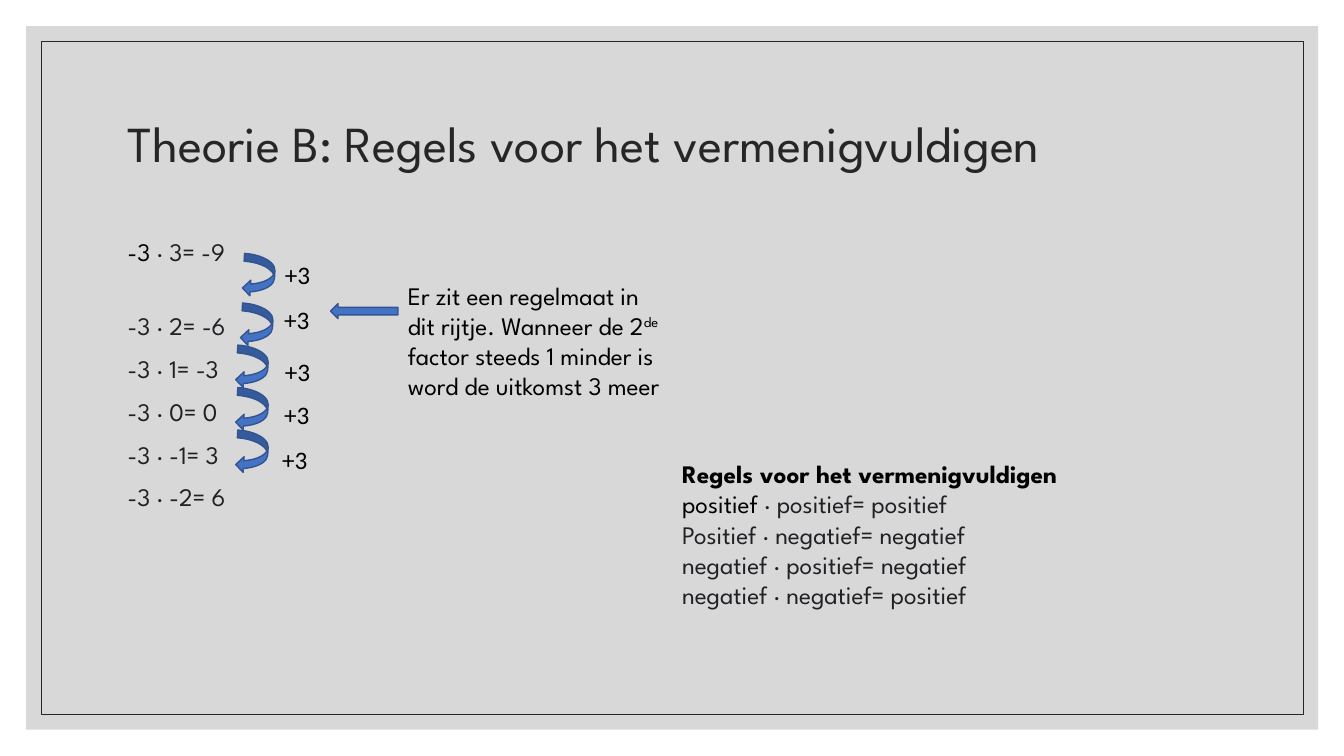
from lxml import etree
from pptx import Presentation
from pptx import util as u
from pptx.dml.color import RGBColor
from pptx.enum import shapes, text
from pptx.oxml.ns import qn

SPARTAN = "League Spartan"
BLACK, DARK, GREY = "000000", "262626", "202124"
BLUE, BLUE_EDGE = "4472C4", "325491"

presentation = Presentation()
presentation.slide_width, presentation.slide_height = u.Cm(33.87), u.Cm(19.05)
slide = presentation.slides.add_slide(presentation.slide_layouts[6])


def add_figure(kind, box, fill=None, line=None, width=1, opacity=100):
    """Add a preset shape; box is left, top, width, height in cm."""
    shape = slide.shapes.add_shape(kind, *map(u.Cm, box))
    shape.shadow.inherit = False
    if fill:
        shape.fill.solid()
        shape.fill.fore_color.rgb = RGBColor.from_string(fill)
        if opacity < 100:
            color = shape.fill._xPr.find(qn("a:solidFill"))[0]
            etree.SubElement(color, qn("a:alpha")).set("val", str(opacity * 1000))
    else:
        shape.fill.background()
    if line:
        shape.line.color.rgb = RGBColor.from_string(line)
        shape.line.width = u.Pt(width)
    else:
        shape.line.fill.background()
    return shape


def add_text(paragraphs, box, size=18, font=SPARTAN, color=BLACK, before=0,
             spacing=1.0, anchor=text.MSO_ANCHOR.TOP):
    """Add a text box; each paragraph is a list of (text, run overrides)."""
    frame = slide.shapes.add_textbox(*map(u.Cm, box)).text_frame
    frame.word_wrap = True
    frame.vertical_anchor = anchor
    for index, runs in enumerate(paragraphs):
        paragraph = frame.paragraphs[0] if index == 0 else frame.add_paragraph()
        paragraph.space_before = u.Pt(before)
        paragraph.line_spacing = spacing
        for words, changes in runs:
            run = paragraph.add_run()
            run.text = words
            run.font.name = font
            run.font.size = u.Pt(size)
            run.font.bold = changes.get("bold", False)
            run.font.color.rgb = RGBColor.from_string(changes.get("color", color))
            if "raised" in changes:
                run.font._element.set("baseline", str(changes["raised"] * 1000))
    return frame


# Background panel and frame
add_figure(shapes.MSO_SHAPE.RECTANGLE, (0.66, 0.66, 32.56, 17.73), fill="BFBFBF", opacity=60)
add_figure(shapes.MSO_SHAPE.RECTANGLE, (1.04, 1.04, 31.8, 16.97), line=DARK, width=0.5)

add_text([[("Theorie B: Regels voor het vermenigvuldigen", {})]], (2.97, 1.78, 27.94, 3.81),
         size=36, color=DARK, spacing=0.9, anchor=text.MSO_ANCHOR.MIDDLE)

# Column of products, with a wider gap after the first
products = ["-3 · 2= -6", "-3 · 1= -3", "-3 · 0= 0", "-3 · -1= 3", "-3 · -2= 6"]
column = add_text([[("-3", {"color": BLACK}), (" · 3= -9", {})]]
                  + [[(product, {})] for product in products],
                  (2.97, 5.84, 3.99, 10.69), color=GREY, before=9)
column.paragraphs[1].space_before = u.Pt(31)

# Curved arrows (left, top) with their +3 labels (left, top)
steps = [
    (5.99, 6.55, 6.93, 6.4),
    (5.94, 7.8, 6.91, 7.54),
    (5.82, 8.86, 6.93, 8.86),
    (5.82, 9.93, 6.91, 9.93),
    (5.82, 11.0, 6.86, 11.07),
]
for arrow_left, arrow_top, label_left, label_top in steps:
    arrow = add_figure(shapes.MSO_SHAPE.CURVED_DOWN_ARROW, (arrow_left, arrow_top, 1.07, 0.79),
                       fill=BLUE, line=BLUE_EDGE)
    arrow.rotation = 93.5
    add_text([[("+3", {})]], (label_left, label_top, 8.33 - label_left, 1.02), font="Calibri")

# Remark about the pattern
add_figure(shapes.MSO_SHAPE.LEFT_ARROW, (8.33, 7.65, 1.7, 0.38), fill=BLUE, line=BLUE_EDGE)
add_text([
    [("Er zit een regelmaat in", {})],
    [("dit rijtje. Wanneer de 2", {}), ("de", {"raised": 30}),
     (" factor steeds 1 minder is word de uitkomst 3 meer", {})],
], (10.03, 6.93, 7.75, 4.11))

# Sign rules
rules = ["Positief · negatief= negatief", "negatief · positief= negatief",
         "negatief · negatief= positief"]
add_text([
    [("Regels voor het vermenigvuldigen", {"bold": True, "color": BLACK})],
    [("positief", {"color": BLACK}), (" · positief= positief", {})],
] + [[(rule, {})] for rule in rules], (16.94, 11.43, 16.9, 4.88), color=GREY)

presentation.save("out.pptx")
